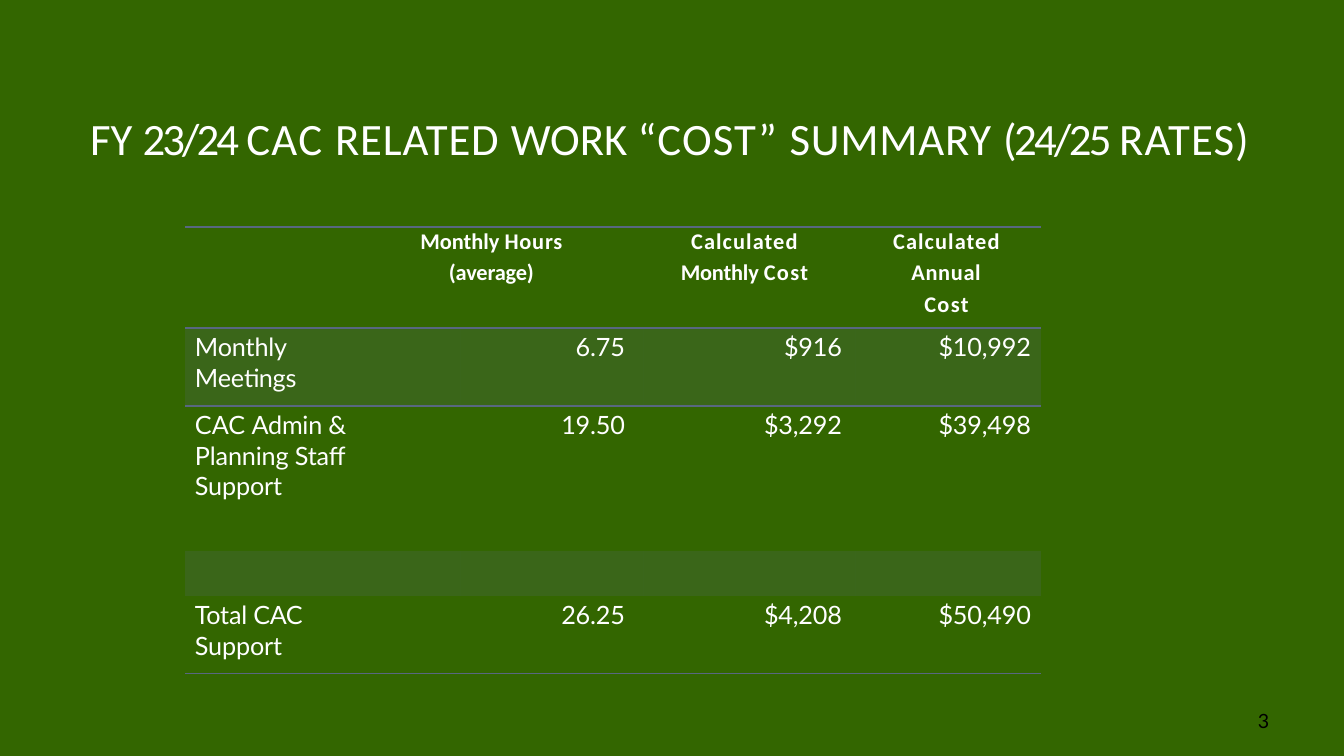
from dataclasses import dataclass

from lxml.etree import SubElement
from pptx import Presentation
from pptx.dml.color import RGBColor
from pptx.enum.text import PP_ALIGN
from pptx.oxml import parse_xml
from pptx.oxml.ns import nsdecls, qn
from pptx.util import Emu, Pt


@dataclass(frozen=True)
class Theme:
    """Colours, fonts and type sizes of the slide."""
    green: str = "336600"
    slate: str = "586781"
    white: str = "FFFFFF"
    black: str = "000000"
    head: str = "Calibri"
    body: str = "Lato"
    title: int = 32
    cell: int = 18
    label: int = 16
    page: int = 14


THEME = Theme()
SCALE = 9071.43
PLAIN = "{2D5ABB26-0587-4C30-8999-92F81FD0307C}"
COLS = (276, 183, 212, 185)
ROWS = (101, 78, 145, 45, 78)
RIGHT = (80, 19, 14, 10)
TITLE = [("FY ", 0), ("23/24 ", -2.1), ("CAC ", 0.9), ("RELATED ", 0.6), ("WORK ", 0),
         ("“COST” ", 0.8), ("SUMMARY ", 0.5), ("(24/25 ", -1.9), ("RATES)", 0.8)]
HEADS = [
    (0, 154, 0, [[("Monthly ", 0), ("Hours", 0.6)], [("(average)", -0.1)]]),
    (2, 33, 44, [[("Calculated", 0.8)], [("Monthly ", -0.1), ("Cost", 1)]]),
    (3, 33, 37, [[("Calculated", 0.8)], [("Annual ", 0.5), ("Cost", 1)]]),
]
BODY = {
    1: ([("Monthly Meetings", -0.1)], "6.75", "$916", "$10,992"),
    2: ([("CAC ", 0), ("Admin ", -0.2), ("& ", 0), ("Planning Staff Support", -0.1)],
        "19.50", "$3,292", "$39,498"),
    4: ([("Total ", -0.2), ("CAC ", -0.3), ("Support", -0.1)],
        "26.25", "$4,208", "$50,490"),
}


def px(num):
    """Turn pixels into EMU."""
    return Emu(round(num * SCALE))


def write(frame, paras, font=THEME.body, size=THEME.cell, color=THEME.white,
          bold=False, align=PP_ALIGN.LEFT, lead=None):
    """Fill a text frame with paragraphs of (text, spacing) runs."""
    for idx, runs in enumerate(paras):
        para = frame.add_paragraph() if idx else frame.paragraphs[0]
        para.alignment = align
        if idx and lead:
            para.line_spacing = lead
        for text, gap in runs:
            run = para.add_run()
            run.text = text
            run.font.name = font
            run.font.size = Pt(size)
            run.font.bold = bold
            run.font.color.rgb = RGBColor.from_string(color)
            run.font._element.set("spc", str(round(gap * 100)))


def inset(item, left=0, top=0, right=0):
    """Set the margins of a cell or text frame."""
    item.margin_left, item.margin_top = px(left), px(top)
    item.margin_right, item.margin_bottom = px(right), 0


def label(slide, box, paras, left, top, **style):
    """Add a text box."""
    frame = slide.shapes.add_textbox(*map(px, box)).text_frame
    frame.word_wrap = True
    inset(frame, left, top)
    write(frame, paras, **style)


def shade(cell):
    """Give a cell the translucent band colour."""
    cell.fill.solid()
    cell.fill.fore_color.rgb = RGBColor.from_string(THEME.slate)
    tint = next(cell._tc.iter(qn("a:srgbClr")))
    SubElement(tint, qn("a:alpha")).set("val", "20000")


def rule(cell, sides):
    """Draw one-point rules on the given sides of a cell."""
    props = cell._tc.get_or_add_tcPr()
    for idx, side in enumerate(sides):
        props.insert(idx, parse_xml(
            f'<a:ln{side} {nsdecls("a")} w="12700"><a:solidFill>'
            f'<a:srgbClr val="{THEME.slate}"/></a:solidFill></a:ln{side}>'))


def costs(slide):
    """Add the cost table."""
    shape = slide.shapes.add_table(
        len(ROWS), len(COLS), px(185), px(227), px(sum(COLS)), px(sum(ROWS)))
    table = shape.table
    table.first_row = table.horz_banding = False
    next(shape._element.iter(qn("a:tableStyleId"))).text = PLAIN
    for col, wide in zip(table.columns, COLS):
        col.width = px(wide)
    for row, high in zip(table.rows, ROWS):
        row.height = px(high)
    table.cell(0, 0).merge(table.cell(0, 1))
    edges = {0: "TB", 1: "TB", 4: "B"}
    for row in range(len(ROWS)):
        for col in range(len(COLS)):
            cell = table.cell(row, col)
            inset(cell)
            if row in (1, 3):
                shade(cell)
            rule(cell, edges.get(row, ""))
    for col, left, right, paras in HEADS:
        cell = table.cell(0, col)
        inset(cell, left, 1, right)
        write(cell.text_frame, paras, font=THEME.head, size=THEME.label,
              bold=True, align=PP_ALIGN.CENTER, lead=1.15)
    for row, (name, *sums) in BODY.items():
        for col, runs in enumerate([name] + [[(text, -0.1)] for text in sums]):
            cell = table.cell(row, col)
            inset(cell, 0 if col else 10, 4, RIGHT[col])
            write(cell.text_frame, [runs],
                  align=PP_ALIGN.RIGHT if col else PP_ALIGN.LEFT)


def main():
    """Build the slide and save it."""
    deck = Presentation()
    deck.slide_width, deck.slide_height = px(1344), px(756)
    slide = deck.slides.add_slide(deck.slide_layouts[6])
    fill = slide.background.fill
    fill.solid()
    fill.fore_color.rgb = RGBColor.from_string(THEME.green)
    label(slide, (67, 102, 1209, 70), [TITLE], 23, 9,
          font=THEME.head, size=THEME.title)
    costs(slide)
    label(slide, (1241, 704, 32, 32), [[("3", -0.5)]], 17, 5,
          size=THEME.page, color=THEME.black)
    deck.save("out.pptx")


if __name__ == "__main__":
    main()
